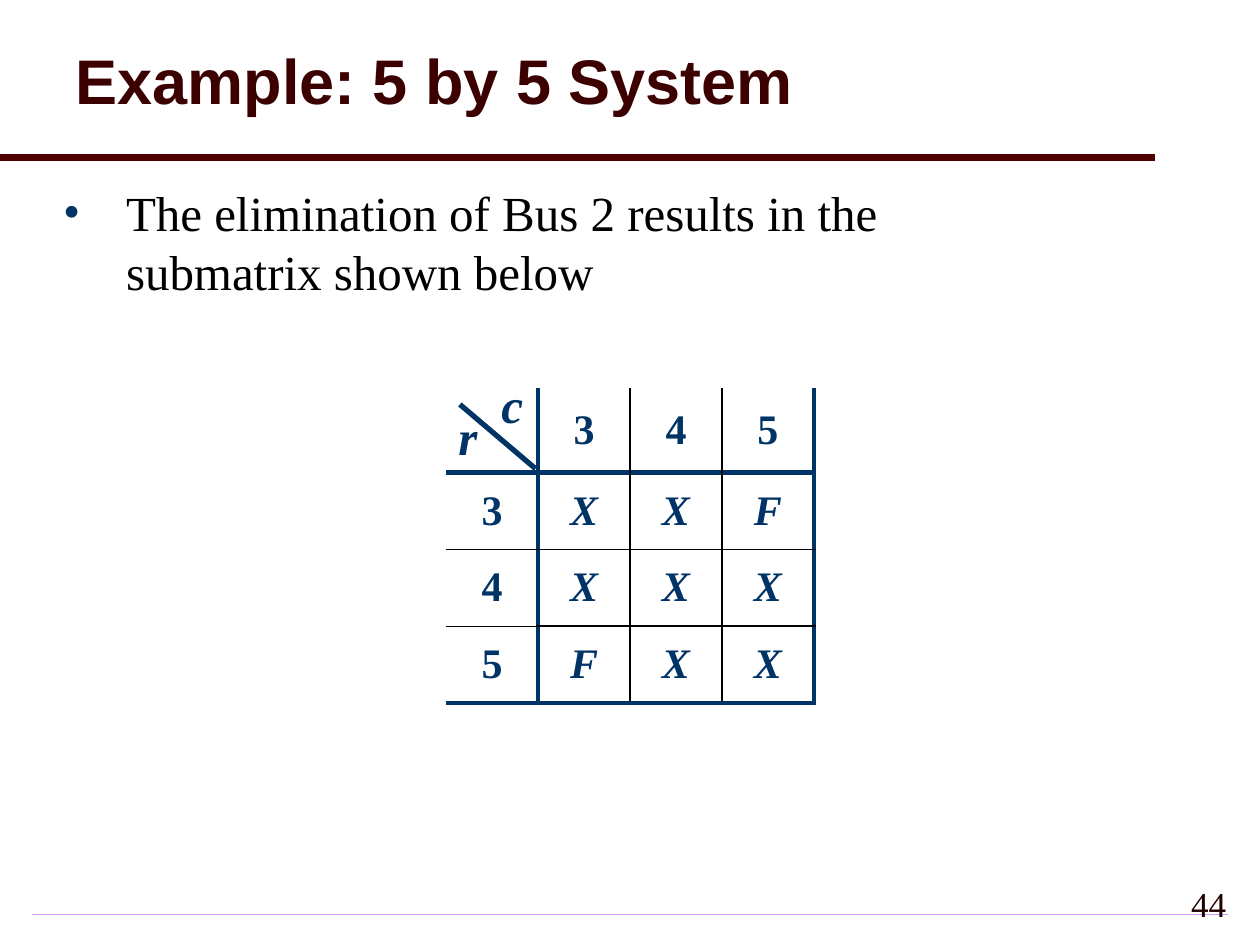
from lxml import etree
from pptx import Presentation
from pptx.dml.color import RGBColor
from pptx.enum.shapes import MSO_CONNECTOR, MSO_SHAPE
from pptx.enum.text import MSO_ANCHOR, MSO_AUTO_SIZE, PP_ALIGN
from pptx.oxml.ns import qn
from pptx.util import Inches, Pt

STRAIGHT = MSO_CONNECTOR.STRAIGHT
RECTANGLE = MSO_SHAPE.RECTANGLE
LEFT, CENTER, RIGHT = PP_ALIGN.LEFT, PP_ALIGN.CENTER, PP_ALIGN.RIGHT
TOP, MIDDLE = MSO_ANCHOR.TOP, MSO_ANCHOR.MIDDLE
NO_FIT = MSO_AUTO_SIZE.NONE

NAVY, BLACK = "003366", "000000"
SERIF = "Times New Roman"
THICK = (NAVY, 3)

TITLE_FONT = {"name": "Arial", "size": Pt(36), "bold": True, "color": "3C0000"}
BODY_FONT = {"name": SERIF, "size": Pt(28), "color": BLACK}
NUMBER_FONT = {"name": SERIF, "size": Pt(20), "color": "1E0000"}
CELL_FONT = {"name": SERIF, "size": Pt(24), "bold": True, "color": NAVY}
AXIS_FONT = {"name": SERIF, "size": Pt(28), "bold": True, "italic": True, "color": NAVY}

MATRIX = [
    ["", "3", "4", "5"],
    ["3", "X", "X", "F"],
    ["4", "X", "X", "X"],
    ["5", "F", "X", "X"],
]
COLUMN_WIDTH = 0.73
ROW_HEIGHTS = [0.67, 0.61, 0.61, 0.61]


def rgb(value):
    return RGBColor.from_string(value)


def format_font(font, values):
    for name, value in values.items():
        if name == "color":
            font.color.rgb = rgb(value)
        else:
            setattr(font, name, value)


def place(shape, left, top, width, height):
    box = {"left": left, "top": top, "width": width, "height": height}
    for name, value in box.items():
        setattr(shape, name, Inches(value))


def write_text(shape, text, font, alignment=LEFT, anchor=TOP):
    frame = shape.text_frame
    frame.auto_size = NO_FIT
    frame.word_wrap = True
    frame.vertical_anchor = anchor
    paragraph = frame.paragraphs[0]
    paragraph.text = text
    paragraph.alignment = alignment
    paragraph.space_before = Pt(0)
    format_font(paragraph.runs[0].font, font)
    return paragraph


def add_label(slide, text, box, font, alignment=LEFT, anchor=TOP):
    shape = slide.shapes.add_textbox(*map(Inches, box))
    write_text(shape, text, font, alignment, anchor)


def add_bullet(paragraph, color, indent):
    properties = paragraph._p.get_or_add_pPr()
    properties.set("marL", str(Inches(indent)))
    properties.set("indent", str(-Inches(indent)))
    bullet_color = etree.SubElement(properties, qn("a:buClr"))
    etree.SubElement(bullet_color, qn("a:srgbClr"), val=color)
    etree.SubElement(properties, qn("a:buFont"), typeface=SERIF)
    etree.SubElement(properties, qn("a:buChar"), char="•")


def add_line(slide, start, end, color, width):
    line = slide.shapes.add_connector(STRAIGHT, *map(Inches, start + end))
    line.line.color.rgb = rgb(color)
    line.line.width = Pt(width)
    etree.SubElement(line._element.spPr, qn("a:effectLst"))


def add_footer_rule(slide):
    rule = slide.shapes.add_shape(RECTANGLE, *map(Inches, (0.25, 7.25, 9.5, 0.01)))
    rule.shadow.inherit = False
    rule.line.fill.background()
    rule.fill.gradient()
    for stop, color in zip(rule.fill.gradient_stops, ("CC99FF", "F3EBFF")):
        stop.color.rgb = rgb(color)
    # Let the gradient run from the edges to the centre
    gradient = rule._element.spPr.find(qn("a:gradFill"))
    gradient.remove(gradient.find(qn("a:lin")))
    shade = etree.SubElement(gradient, qn("a:path"), path="shape")
    etree.SubElement(shade, qn("a:fillToRect"), l="50000", t="50000", r="50000", b="50000")


def edge_style(edge, crossing):
    """Style of a grid line at one edge, where it crosses a row or column."""
    if edge == 0:
        return None
    if edge in (1, len(MATRIX)):
        return THICK
    return (BLACK, 0.75 if crossing == 0 else 1)


def set_borders(cell, row, column):
    styles = {
        "a:lnL": edge_style(column, row),
        "a:lnR": edge_style(column + 1, row),
        "a:lnT": edge_style(row, column),
        "a:lnB": edge_style(row + 1, column),
    }
    properties = cell._tc.get_or_add_tcPr()
    for index, (tag, style) in enumerate(styles.items()):
        border = etree.Element(qn(tag))
        if style:
            color, width = style
            border.set("w", str(Pt(width)))
            fill = etree.SubElement(border, qn("a:solidFill"))
            etree.SubElement(fill, qn("a:srgbClr"), val=color)
        else:
            etree.SubElement(border, qn("a:noFill"))
        properties.insert(index, border)


def add_matrix(slide, left, top):
    size = len(MATRIX)
    box = (left, top, COLUMN_WIDTH * size, sum(ROW_HEIGHTS))
    table = slide.shapes.add_table(size, size, *map(Inches, box)).table
    table.first_row = False
    table.horz_banding = False
    for column in table.columns:
        column.width = Inches(COLUMN_WIDTH)
    for row, height in zip(table.rows, ROW_HEIGHTS):
        row.height = Inches(height)
    for row, values in enumerate(MATRIX):
        for column, value in enumerate(values):
            cell = table.cell(row, column)
            cell.fill.background()
            cell.vertical_anchor = MIDDLE
            set_borders(cell, row, column)
            paragraph = cell.text_frame.paragraphs[0]
            paragraph.text = value
            paragraph.alignment = CENTER
            format_font(paragraph.font, CELL_FONT)
            for run in paragraph.runs:
                format_font(run.font, {**CELL_FONT, "italic": value.isalpha()})


def main():
    presentation = Presentation()
    presentation.slide_width = Inches(10)
    presentation.slide_height = Inches(7.5)
    slide = presentation.slides.add_slide(presentation.slide_layouts[1])
    title, body = slide.placeholders

    # Rules and slide number
    add_footer_rule(slide)
    add_line(slide, (0, 1.25), (9.17, 1.25), "500000", 4)
    add_label(slide, "44", (7.75, 6.92, 2.08, 0.5), NUMBER_FONT, RIGHT, MIDDLE)

    # Title and body
    place(title, 0.5, 0.08, 8.75, 1.17)
    heading = write_text(title, "Example: 5 by 5 System", TITLE_FONT, anchor=MIDDLE)
    heading.line_spacing = 0.9
    place(body, 0.4, 1.4, 8.27, 1.04)
    sentence = "The elimination of Bus 2 results in the submatrix shown below"
    add_bullet(write_text(body, sentence, BODY_FONT), NAVY, 0.5)

    # Submatrix with its row and column labels
    add_matrix(slide, 3.54, 3.08)
    add_label(slide, "r", (3.54, 3.18, 0.21, 0.57), AXIS_FONT)
    add_label(slide, "c", (3.88, 2.92, 0.21, 0.57), AXIS_FONT)
    add_line(slide, (4.25, 3.72), (3.65, 3.21), *THICK)

    presentation.save("out.pptx")


if __name__ == "__main__":
    main()
